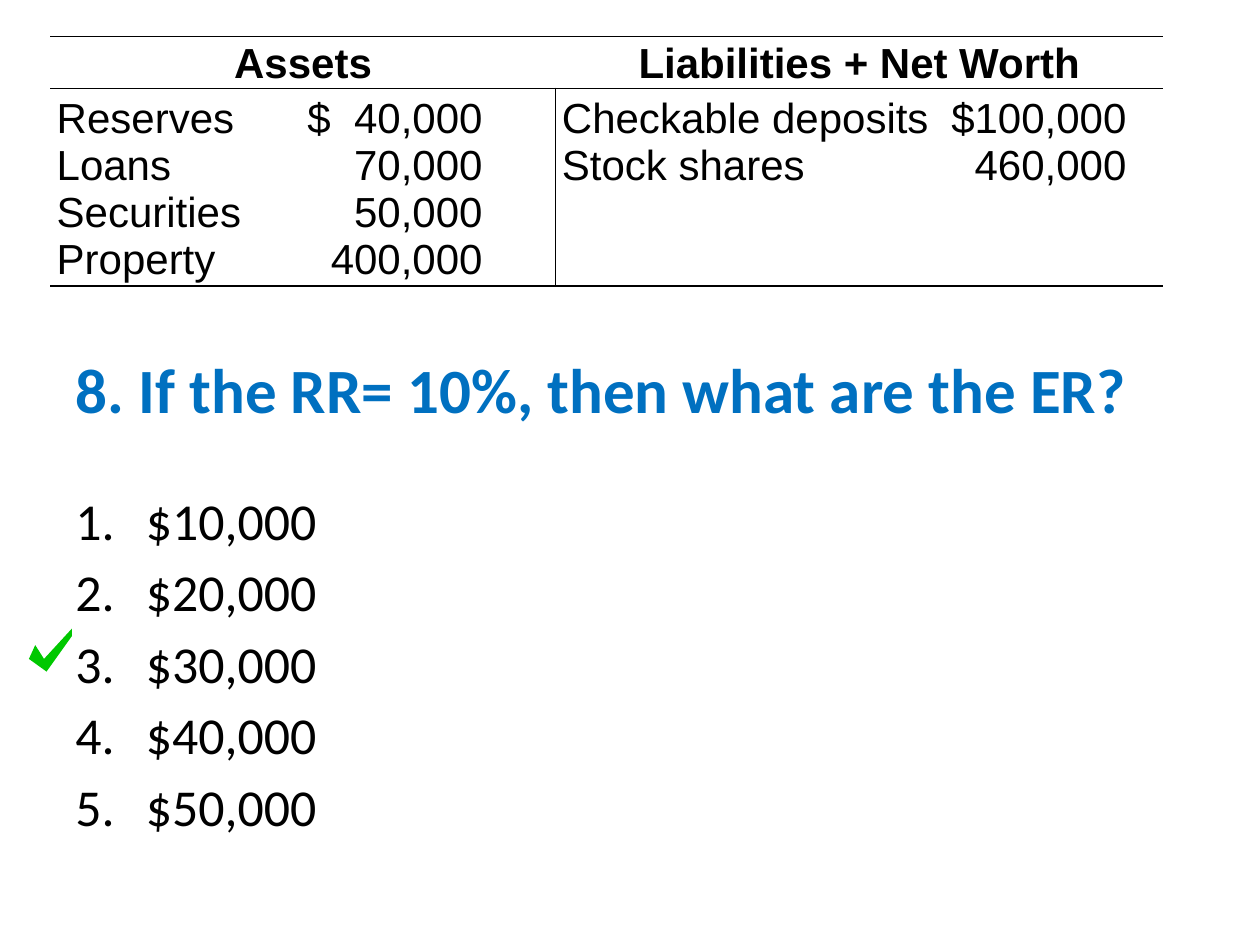
from dataclasses import dataclass

from lxml.etree import SubElement
from pptx import Presentation
from pptx.dml.color import RGBColor as RGB
from pptx.enum.text import MSO_ANCHOR as Anchor, MSO_AUTO_SIZE as AutoSize, PP_ALIGN as Align
from pptx.oxml.ns import qn
from pptx.util import Inches, Pt


@dataclass(frozen=True)
class Theme:
    text: RGB = RGB(0x00, 0x00, 0x00)
    accent: RGB = RGB(0x00, 0x70, 0xC0)
    correct: RGB = RGB(0x00, 0xC8, 0x00)
    slide_font: str = "Calibri"
    table_font: str = "Arial"
    title_size: float = 36
    answer_size: float = 29.6
    table_size: float = 24
    rule_width: float = 1
    plain_table: str = "{2D5ABB26-0587-4C30-8999-92F81FD0307C}"


def write(frame, lines, *, font, size, color, bold=False, align=Align.LEFT, before=0):
    """Fill a text frame with one formatted paragraph per line."""
    frame.word_wrap = True
    for index, line in enumerate(lines):
        paragraph = frame.add_paragraph() if index else frame.paragraphs[0]
        paragraph.alignment = align
        paragraph.space_before = Pt(before)
        run = paragraph.add_run()
        run.text = line
        run.font.name, run.font.size, run.font.bold = font, Pt(size), bold
        run.font.color.rgb = color
    return frame.paragraphs


class QuizSlide:
    def __init__(self, deck, theme):
        self.theme = theme
        self.slide = deck.slides.add_slide(deck.slide_layouts[5])

    def title(self, question, left, top, width, height):
        title = self.slide.shapes.title
        title.left, title.top = Inches(left), Inches(top)
        title.width, title.height = Inches(width), Inches(height)
        frame = title.text_frame
        frame.auto_size = AutoSize.NONE
        frame.vertical_anchor = Anchor.MIDDLE
        write(frame, [question], font=self.theme.slide_font, bold=True,
              size=self.theme.title_size, color=self.theme.accent)

    def answers(self, choices, left, top, width, height):
        box = self.slide.shapes.add_textbox(
            Inches(left), Inches(top), Inches(width), Inches(height))
        paragraphs = write(box.text_frame, choices, font=self.theme.slide_font, before=5.3,
                           size=self.theme.answer_size, color=self.theme.text)
        indent = Inches(0.56)
        for paragraph in paragraphs:
            props = paragraph._p.get_or_add_pPr()
            props.set("marL", str(indent))
            props.set("indent", str(-indent))
            SubElement(props, qn("a:buFont"), typeface="+mj-lt")
            SubElement(props, qn("a:buAutoNum"), type="arabicPeriod")

    def balance_sheet(self, sides, left, top, col_widths, row_heights):
        frame = self.slide.shapes.add_table(
            2, len(sides), Inches(left), Inches(top),
            Inches(sum(col_widths)), Inches(sum(row_heights)))
        table = frame.table
        table.first_row = table.horz_banding = False
        table._tbl.tblPr.find(qn("a:tableStyleId")).text = self.theme.plain_table
        for row, height in zip(table.rows, row_heights):
            row.height = Inches(height)
        for col, (heading, entries, tabs) in enumerate(sides):
            table.columns[col].width = Inches(col_widths[col])
            header, body = table.cell(0, col), table.cell(1, col)
            self.cell(header, [heading], (0, 0.03, 0, 0.01), ("T", "B"),
                      bold=True, align=Align.CENTER)
            divider = "L" if col else "R"
            paragraphs = self.cell(body, entries, (0.05, 0.06, 0, 0.02), (divider, "T", "B"))
            for paragraph in paragraphs:
                stops = SubElement(paragraph._p.get_or_add_pPr(), qn("a:tabLst"))
                for position, side in tabs:
                    SubElement(stops, qn("a:tab"), pos=str(Inches(position)), algn=side)

    def cell(self, cell, lines, margins, rules, **style):
        (cell.margin_left, cell.margin_top,
         cell.margin_right, cell.margin_bottom) = map(Inches, margins)
        props = cell._tc.get_or_add_tcPr()
        for edge in rules:
            line = SubElement(props, qn(f"a:ln{edge}"), w=str(Pt(self.theme.rule_width)))
            fill = SubElement(line, qn("a:solidFill"))
            SubElement(fill, qn("a:srgbClr"), val=str(self.theme.text))
        cell.fill.background()
        return write(cell.text_frame, lines, font=self.theme.table_font,
                     size=self.theme.table_size, color=self.theme.text, **style)

    def check_mark(self, outline):
        points = [(Inches(x), Inches(y)) for x, y in outline]
        builder = self.slide.shapes.build_freeform(*points[0])
        builder.add_line_segments(points[1:], close=True)
        check = builder.convert_to_shape()
        check.shadow.inherit = False
        check.fill.solid()
        check.fill.fore_color.rgb = self.theme.correct
        check.line.fill.background()


def main():
    deck = Presentation()
    deck.slide_width, deck.slide_height = Inches(10), Inches(7.5)
    quiz = QuizSlide(deck, Theme())

    # Question
    quiz.title("8. If the RR= 10%, then what are the ER?", 0.5, 2.67, 9, 0.83)

    # Balance sheet: heading, entries and tab stops of each side
    assets = ["Reserves\t$\t40,000", "Loans\t\t70,000",
              "Securities\t\t50,000", "Property\t\t400,000"]
    liabilities = ["Checkable deposits\t$100,000", "Stock shares\t460,000"]
    quiz.balance_sheet(
        [("Assets", assets, [(1.99, "l"), (3.38, "r")]),
         ("Liabilities + Net Worth", liabilities, [(4.48, "r")])],
        0.4, 0.29, col_widths=(4.01, 4.82), row_heights=(0.38, 1.37))

    # Answer choices, with the third one ticked
    quiz.answers([f"${amount},000" for amount in range(10, 60, 10)], 0.5, 3.83, 4.33, 2.92)
    quiz.check_mark([(0.28, 5.12), (0.23, 5.23), (0.37, 5.33),
                     (0.57, 5.05), (0.57, 4.99), (0.35, 5.23)])

    deck.save("out.pptx")


if __name__ == "__main__":
    main()
